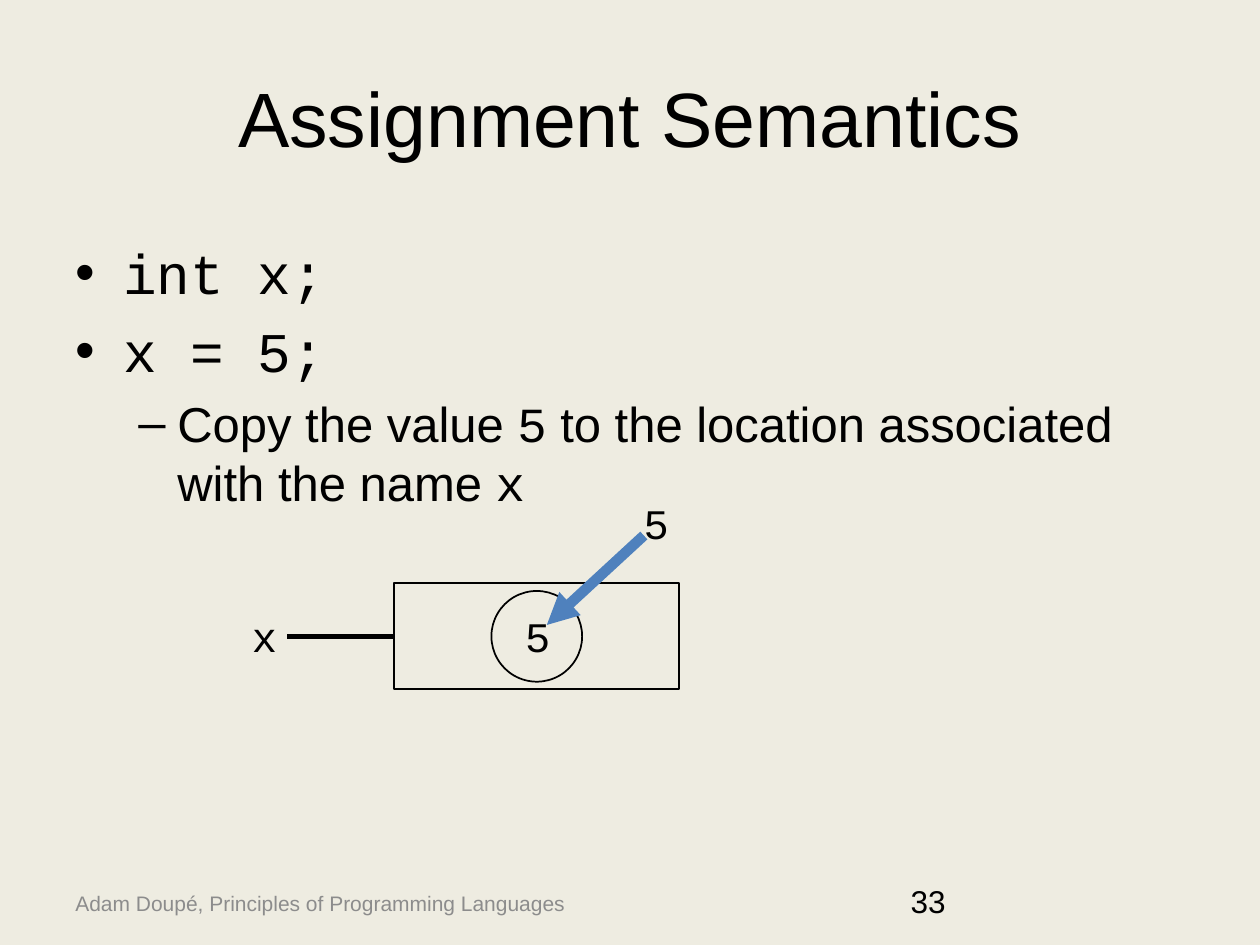
import pptx
import pptx.util
import pptx.dml.color
import pptx.enum.shapes
import pptx.enum.text
import pptx.oxml.ns
import lxml.etree

Inches, Pt = pptx.util.Inches, pptx.util.Pt
ALIGN, ANCHOR = pptx.enum.text.PP_ALIGN, pptx.enum.text.MSO_ANCHOR
SHAPE = pptx.enum.shapes.MSO_SHAPE
COLORS = {"paper": "EEECE1", "ink": "000000", "muted": "8C8C8C", "arrow": "4F81BD"}
SANS, MONO = "Arial", "Courier New"

# Content
TITLE = "Assignment Semantics"
FOOTER = "Adam Doupé, Principles of Programming Languages"
PAGE_NUMBER = "33"
# Bullet levels: sign, left margin, hanging indent, size
LEVELS = [("•", 0.38, 0.38, 32), ("–", 0.81, 0.31, 28)]
BULLETS = [
    (0, [("int x;", MONO)]),
    (0, [("x = 5;", MONO)]),
    (1, [("Copy the value ", SANS), ("5", MONO),
         (" to the location associated with the name ", SANS), ("x", MONO)]),
]
CELL = (3.13, 4.63, 2.26, 0.84)
VALUE = (3.9, 4.69, 0.72, 0.72)
LABEL_SIZE = (0.38, 0.5)
ARROW = ((5.11, 4.25), (4.34, 4.96))


def color(name):
    return pptx.dml.color.RGBColor.from_string(COLORS[name])


def add_text(para, text, size=24, font=MONO, ink="ink"):
    span = para.add_run()
    span.text = text
    span.font.size, span.font.name = Pt(size), font
    span.font.color.rgb = color(ink)


def place(box, area):
    box.left, box.top, box.width, box.height = map(Inches, area)


def add_box(area, text, wrap=True, anchor=ANCHOR.TOP, **style):
    box = page.shapes.add_textbox(*map(Inches, area))
    box.text_frame.word_wrap = wrap
    box.text_frame.vertical_anchor = anchor
    add_text(box.text_frame.paragraphs[0], text, **style)
    return box


def add_outline(kind, area):
    shape = page.shapes.add_shape(kind, *map(Inches, area))
    shape.shadow.inherit = False
    shape.fill.background()
    shape.line.color.rgb, shape.line.width = color("ink"), Pt(1)
    return shape


def add_line(start, end, width, ink="ink"):
    line = page.shapes.add_connector(
        pptx.enum.shapes.MSO_CONNECTOR.STRAIGHT, *map(Inches, start + end))
    line.line.color.rgb, line.line.width = color(ink), Pt(width)
    lxml.etree.SubElement(line._element.spPr, pptx.oxml.ns.qn("a:effectLst"))
    return line


def add_bullet(para, level, spans):
    sign, margin, hang, size = LEVELS[level]
    para.level = level
    props = para._p.get_or_add_pPr()
    props.set("marL", str(Inches(margin)))
    props.set("indent", str(-Inches(hang)))
    font = lxml.etree.SubElement(props, pptx.oxml.ns.qn("a:buFont"))
    font.set("typeface", SANS)
    lxml.etree.SubElement(props, pptx.oxml.ns.qn("a:buChar")).set("char", sign)
    for text, face in spans:
        add_text(para, text, size=size, font=face)


deck = pptx.Presentation()
deck.slide_width, deck.slide_height = Inches(10), Inches(7.5)
page = deck.slides.add_slide(deck.slide_layouts[5])
page.background.fill.solid()
page.background.fill.fore_color.rgb = color("paper")

# Title
title = page.shapes.title
place(title, (0.5, 0.3, 9, 1.25))
title.text_frame.vertical_anchor = ANCHOR.MIDDLE
title.text_frame.paragraphs[0].alignment = ALIGN.CENTER
add_text(title.text_frame.paragraphs[0], TITLE, size=44, font=SANS)

# Bullets
body = page.shapes.add_textbox(*map(Inches, (0.5, 1.75, 9, 4.95)))
frame = body.text_frame
frame.word_wrap = True
frame.margin_top = Inches(0.14)
for index, (level, spans) in enumerate(BULLETS):
    para = frame.add_paragraph() if index else frame.paragraphs[0]
    if index:
        para.space_before = Pt(LEVELS[level][3] * 0.2)
    add_bullet(para, level, spans)

# Footer and page number
add_box((0.5, 6.97, 4.26, 0.4), FOOTER, anchor=ANCHOR.MIDDLE, size=12, font=SANS, ink="muted")
add_box((7.13, 6.95, 2.33, 0.4), PAGE_NUMBER, size=18, font=SANS)

# Memory cell joined to its name
cell = add_outline(SHAPE.RECTANGLE, CELL)
name = add_box((1.9, 4.8) + LABEL_SIZE, "x", wrap=False)
link = add_line((2.28, 5.05), (3.13, 5.05), 3)
link.begin_connect(name, 3)
link.end_connect(cell, 1)

# Value copied into the cell
add_outline(SHAPE.OVAL, VALUE)
for corner in [(4.07, 4.8), (5.01, 3.9)]:
    add_box(corner + LABEL_SIZE, "5", wrap=False)
arrow = add_line(*ARROW, 6, "arrow")
head = lxml.etree.SubElement(arrow.line._get_or_add_ln(), pptx.oxml.ns.qn("a:tailEnd"))
head.set("type", "triangle")

deck.save("out.pptx")
